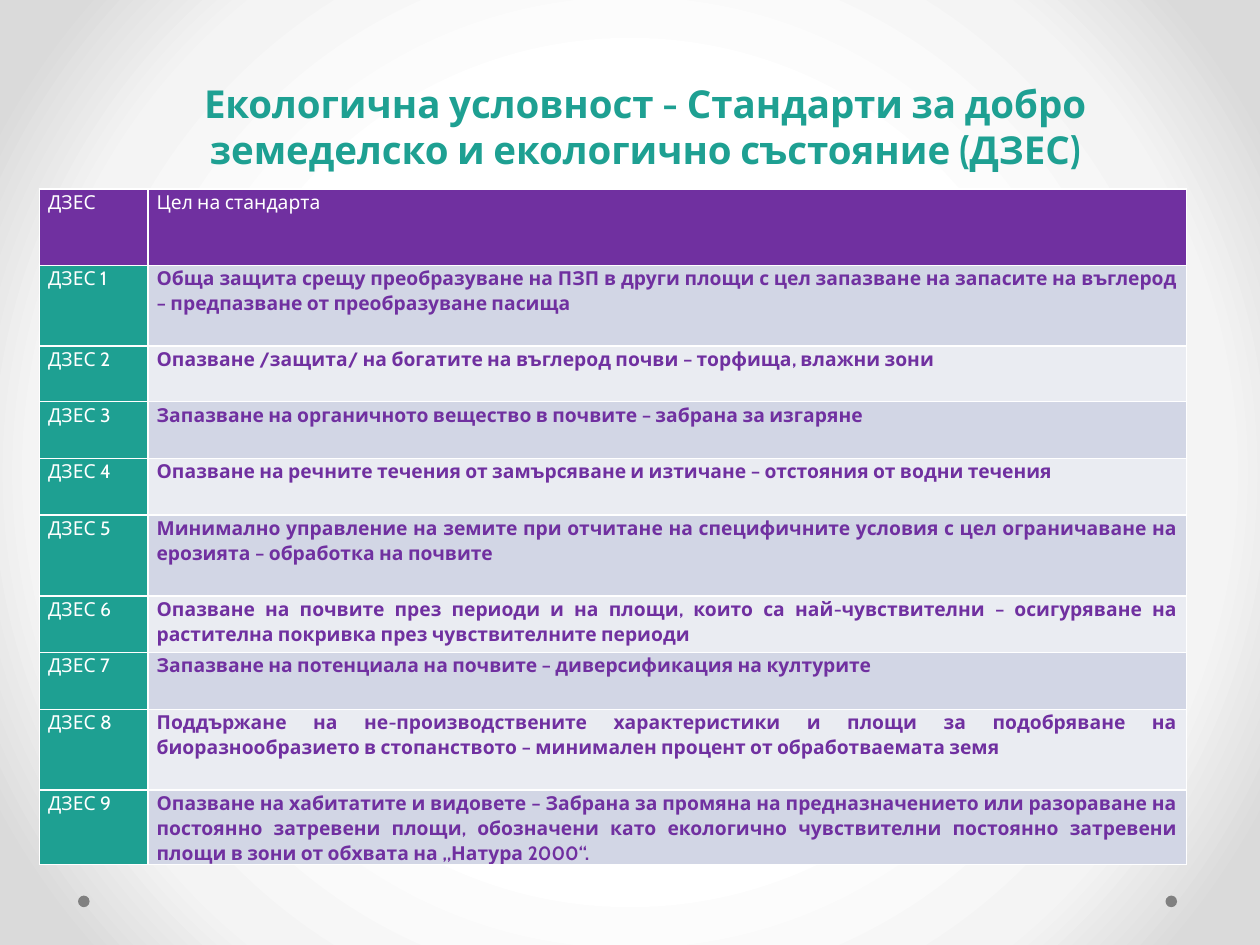
from lxml import etree
from pptx import Presentation
from pptx.dml.color import RGBColor
from pptx.enum import shapes, text
from pptx.oxml import ns
from pptx.util import Pt

COLORS = {
    "teal": "1EA092", "purple": "7030A0", "white": "FFFFFF", "dot": "808080",
    "odd": "D2D6E5", "even": "EAECF2", "mist": "F4F4F4", "edge": "DADADA",
}
FONT = "Cabin"
TITLE = "Екологична условност - Стандарти за добро земеделско и екологично състояние (ДЗЕС)"
HEADER = ("ДЗЕС", "Цел на стандарта")
GOALS = [
    ("Обща защита срещу преобразуване на ПЗП в други площи с цел запазване на запасите "
     "на въглерод – предпазване от преобразуване пасища", 46),
    ("Опазване /защита/ на богатите на въглерод почви – торфища, влажни зони", 32),
    ("Запазване на органичното вещество в почвите – забрана за изгаряне", 32.4),
    ("Опазване на речните течения от замърсяване и изтичане – отстояния от водни течения", 32.4),
    ("Минимално управление на земите при отчитане на специфичните условия с цел "
     "ограничаване на ерозията – обработка на почвите", 46.2),
    ("Опазване на почвите през периоди и на площи, които са най-чувствителни – "
     "осигуряване на растителна покривка през чувствителните периоди", 32.4),
    ("Запазване на потенциала на почвите – диверсификация на културите", 32.4),
    ("Поддържане на не-производствените характеристики и площи за подобряване на "
     "биоразнообразието в стопанството – минимален процент от обработваемата земя", 46.2),
    ("Опазване на хабитатите и видовете – Забрана за промяна на предназначението или "
     "разораване на постоянно затревени площи, обозначени като екологично чувствителни "
     "постоянно затревени площи в зони от обхвата на „Натура 2000“.", 33),
]
HEADER_HEIGHT = 43.6


def rgb(name):
    return RGBColor.from_string(COLORS[name])


def add_node(parent, tag, **attributes):
    return etree.SubElement(parent, ns.qn(tag), attributes)


def write(frame, words, size=11, color="white", bold=False,
          align=text.PP_ALIGN.LEFT, spacing=None):
    paragraph = frame.paragraphs[0]
    paragraph.alignment = align
    paragraph.line_spacing = spacing
    run = paragraph.add_run()
    run.text = words
    run.font.name = FONT
    run.font.size = Pt(size)
    run.font.bold = bold
    run.font.color.rgb = rgb(color)


def paint_background(slide):
    fill = slide.background.fill
    fill.gradient()
    gradient = slide.background._cSld.find(".//" + ns.qn("a:gradFill"))
    for child in list(gradient):
        gradient.remove(child)
    stops = add_node(gradient, "a:gsLst")
    for percent, color in ((50, "white"), (76, "mist"), (92, "edge")):
        stop = add_node(stops, "a:gs", pos=str(percent * 1000))
        add_node(stop, "a:srgbClr", val=COLORS[color])
    circle = add_node(gradient, "a:path", path="circle")
    add_node(circle, "a:fillToRect", **dict.fromkeys("ltrb", "50000"))


def add_dots(slide, left, top, width, size):
    for x in (left, left + width - size):
        dot = slide.shapes.add_shape(
            shapes.MSO_SHAPE.OVAL, Pt(x), Pt(top), Pt(size), Pt(size))
        dot.shadow.inherit = False
        dot.fill.solid()
        dot.fill.fore_color.rgb = rgb("dot")
        dot.line.fill.background()


def add_title(slide, left, top, width, height):
    title = slide.shapes.add_textbox(Pt(left), Pt(top), Pt(width), Pt(height))
    frame = title.text_frame
    frame.word_wrap = True
    frame.auto_size = text.MSO_AUTO_SIZE.SHAPE_TO_FIT_TEXT
    write(frame, TITLE, size=22, color="teal", bold=True, align=text.PP_ALIGN.CENTER)


def fill_cell(cell, words, background, **font):
    cell.margin_left = cell.margin_right = Pt(5)
    cell.margin_top = cell.margin_bottom = 0
    properties = cell._tc.get_or_add_tcPr()
    for side in "LRTB":
        border = add_node(properties, "a:ln" + side, w=str(Pt(1)))
        add_node(add_node(border, "a:solidFill"), "a:srgbClr", val=COLORS["white"])
    cell.fill.solid()
    cell.fill.fore_color.rgb = rgb(background)
    write(cell.text_frame, words, spacing=1.07, **font)


def add_standards(slide, left, top, width, code_width):
    heights = [HEADER_HEIGHT] + [height for _, height in GOALS]
    standards = slide.shapes.add_table(
        len(heights), 2, Pt(left), Pt(top), Pt(width), Pt(sum(heights))).table
    standards.columns[0].width = Pt(code_width)
    standards.columns[1].width = Pt(width - code_width)
    for row, height in zip(standards.rows, heights):
        row.height = Pt(height)
    for column, heading in enumerate(HEADER):
        fill_cell(standards.cell(0, column), heading, "purple")
    for number, (goal, _) in enumerate(GOALS, 1):
        fill_cell(standards.cell(number, 0), f"ДЗЕС {number}", "teal")
        fill_cell(standards.cell(number, 1), goal, "odd" if number % 2 else "even",
                  color="purple", bold=True, align=text.PP_ALIGN.JUSTIFY)


def main():
    deck = Presentation()
    deck.slide_width, deck.slide_height = Pt(720), Pt(540)
    slide = deck.slides.add_slide(deck.slide_layouts[6])
    paint_background(slide)
    add_dots(slide, 44.6, 511.8, 628, 6.6)
    add_title(slide, 42, 42, 653.6, 60.6)
    add_standards(slide, 22.5, 108, 655.4, 62)
    deck.save("out.pptx")


if __name__ == "__main__":
    main()
